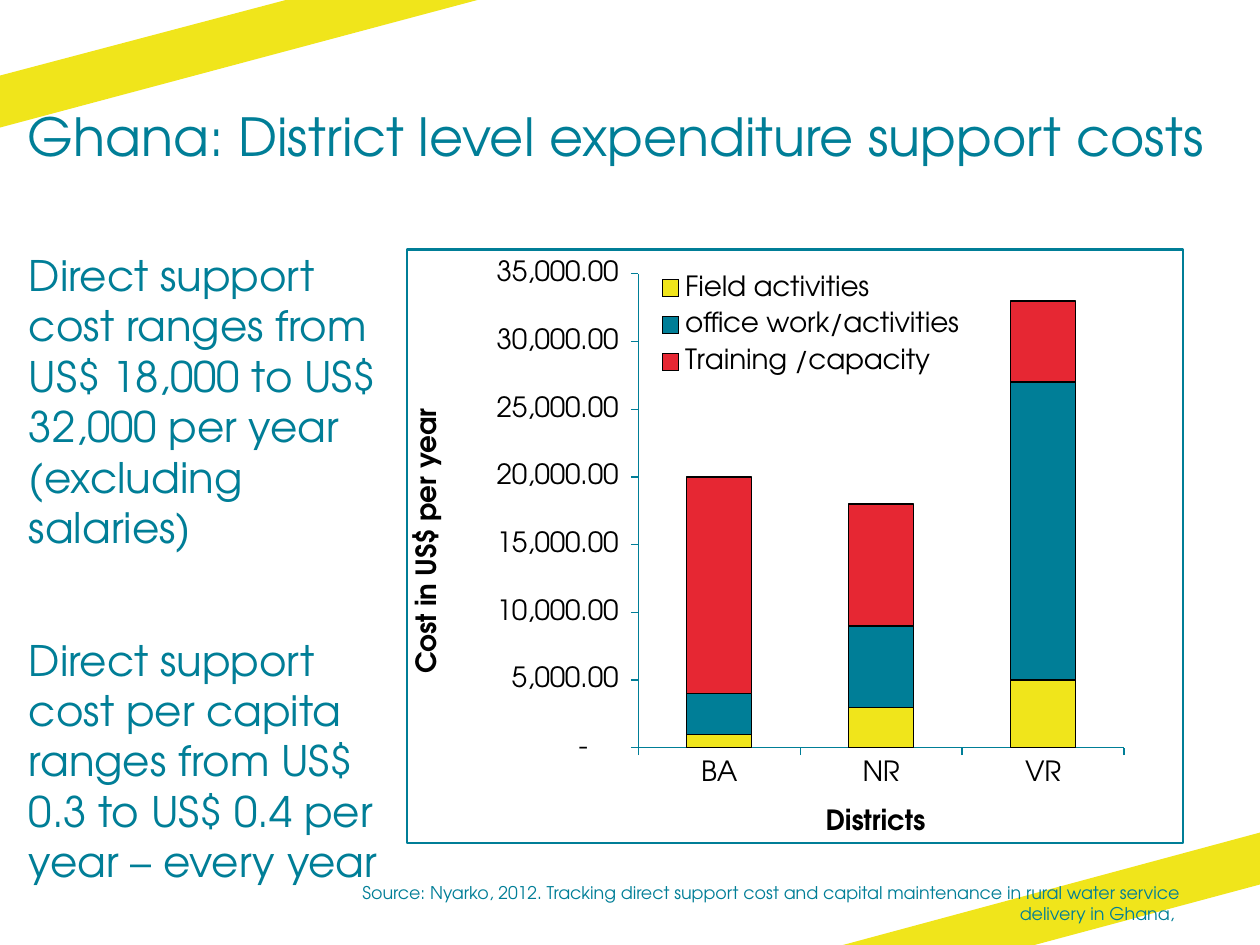
from lxml import etree
from pptx import Presentation
from pptx.chart.data import CategoryChartData
from pptx.dml.color import RGBColor
from pptx.enum.chart import XL_CHART_TYPE, XL_LEGEND_POSITION, XL_TICK_MARK
from pptx.enum.text import MSO_ANCHOR, MSO_AUTO_SIZE, PP_ALIGN
from pptx.oxml import parse_xml
from pptx.oxml.ns import nsdecls, qn
from pptx.util import Inches, Pt

STACKED = XL_CHART_TYPE.COLUMN_STACKED
LEGEND_BOTTOM = XL_LEGEND_POSITION.BOTTOM
TICK_OUT, TICK_NONE = XL_TICK_MARK.OUTSIDE, XL_TICK_MARK.NONE
TOP, NO_FIT = MSO_ANCHOR.TOP, MSO_AUTO_SIZE.NONE
LEFT, RIGHT = PP_ALIGN.LEFT, PP_ALIGN.RIGHT

THEME = {
    "font": "TeX Gyre Adventor",
    "teal": RGBColor.from_string("007E97"),
    "yellow": RGBColor.from_string("F0E51B"),
    "red": RGBColor.from_string("E62733"),
    "black": RGBColor.from_string("000000"),
    "title": Pt(30), "body": Pt(24), "chart": Pt(16), "source": Pt(10),
}

prs = Presentation()
prs.slide_width, prs.slide_height = Inches(10), Inches(7.5)
W, H = prs.slide_width, prs.slide_height
slide = prs.slides.add_slide(prs.slide_layouts[3])
title, findings, source = slide.placeholders


def fill_placeholder(holder, box, texts, size, align=LEFT, gap=0, spacing=1.0):
    """Place a placeholder and give it plain, unbulleted paragraphs."""
    holder.left, holder.top, holder.width, holder.height = (Inches(v) for v in box)
    frame = holder.text_frame
    frame.margin_left = frame.margin_right = frame.margin_top = frame.margin_bottom = 0
    frame.vertical_anchor, frame.word_wrap, frame.auto_size = TOP, True, NO_FIT
    for i, text in enumerate(texts):
        line = frame.paragraphs[0] if i == 0 else frame.add_paragraph()
        line.text = text
        props = line._p.get_or_add_pPr()
        props.set("marL", "0")
        props.set("indent", "0")
        etree.SubElement(props, qn("a:buNone"))
        line.alignment, line.line_spacing = align, spacing
        line.space_before, line.space_after = Pt(0), Pt(gap)
        line.font.name, line.font.size = THEME["font"], size
        line.font.color.rgb = THEME["teal"]


def set_layout(part, target=None, **shares):
    """Fix a chart part's place as shares of the chart's size."""
    for old in part.findall(qn("c:layout")):
        part.remove(old)
    layout = parse_xml(f"<c:layout {nsdecls('c')}><c:manualLayout/></c:layout>")
    if target:
        etree.SubElement(layout[0], qn("c:layoutTarget")).set("val", target)
    for key in ("x", "y"):
        etree.SubElement(layout[0], qn(f"c:{key}Mode")).set("val", "edge")
    for key, share in shares.items():
        etree.SubElement(layout[0], qn(f"c:{key}")).set("val", str(share))
    overlay = part.find(qn("c:overlay"))
    if overlay is None:
        part.insert(0, layout)
    else:
        overlay.addprevious(layout)


# Diagonal corner bands, behind the text
bands = [
    [(0.227, 0), (0, 0.08), (0, 0.135), (0.379, 0)],
    [(0.669, 1), (0.821, 1), (1, 0.936), (1, 0.881)],
]
for corners in bands:
    points = [(x * W, y * H) for x, y in corners]
    outline = slide.shapes.build_freeform(*points[0])
    outline.add_line_segments(points[1:], close=True)
    band = outline.convert_to_shape()
    band.shadow.inherit = False
    band.fill.solid()
    band.fill.fore_color.rgb = THEME["yellow"]
    band.line.fill.background()
    slide.shapes._spTree.insert(2, band._element)

# Title, findings and source
fill_placeholder(title, (0.22, 0.88, 9.56, 0.64),
                 ["Ghana: District level expenditure support costs"],
                 THEME["title"], spacing=0.9)
fill_placeholder(findings, (0.23, 1.98, 2.84, 4.67), [
    "Direct support cost ranges from US$ 18,000 to US$ 32,000 per year (excluding salaries)",
    "Direct support cost per capita ranges from US$ 0.3 to US$ 0.4 per year – every year",
], THEME["body"], gap=47)
fill_placeholder(source, (2.51, 7, 6.85, 0.12), [
    "Source: Nyarko, 2012. Tracking direct support cost and capital maintenance "
    "in rural water service delivery in Ghana, ",
], THEME["source"], align=RIGHT, gap=9)

# Cost chart
activities = [
    ("Field activities", (1000, 3000, 5000), "yellow"),
    ("office work/activities", (3000, 6000, 22000), "teal"),
    ("Training /capacity", (16000, 9000, 6000), "red"),
]
costs = CategoryChartData()
costs.categories = ["BA", "NR", "VR"]
for name, values, _ in activities:
    costs.add_series(name, values)
chart = slide.shapes.add_chart(STACKED, Inches(3.22), Inches(1.97),
                               Inches(6.18), Inches(4.73), costs).chart
chart.has_title = False
chart.font.name, chart.font.size = THEME["font"], THEME["chart"]
chart.font.color.rgb = THEME["black"]

plot = chart.plots[0]
plot.gap_width, plot.overlap, plot.vary_by_categories = 150, 100, False
for series, (_, _, color) in zip(plot.series, activities):
    series.format.fill.solid()
    series.format.fill.fore_color.rgb = THEME[color]
    series.format.line.color.rgb = THEME["black"]
    series.format.line.width = Pt(0.75)
set_layout(chart._chartSpace.chart.plotArea, "inner", x=0.298, y=0.041, w=0.626, h=0.799)

# Axes
districts, cost = chart.category_axis, chart.value_axis
for axis, label, x, y in ((districts, "Districts", 0.533, 0.93),
                          (cost, "Cost in US$ per year", 0, 0.26)):
    axis.has_major_gridlines = False
    axis.major_tick_mark, axis.minor_tick_mark = TICK_OUT, TICK_NONE
    axis.format.line.color.rgb = THEME["teal"]
    axis.format.line.width = Pt(0.75)
    caption = axis.axis_title.text_frame.paragraphs[0]
    caption.text = label
    caption.font.name, caption.font.size = THEME["font"], THEME["chart"]
    caption.font.bold, caption.font.color.rgb = True, THEME["black"]
    set_layout(axis.axis_title._element, x=x, y=y)
cost.axis_title.text_frame._txBody.bodyPr.set("rot", "-5400000")
cost.minimum_scale, cost.maximum_scale, cost.major_unit = 0, 35000, 5000
cost.tick_labels.number_format = r'_(* #,##0.00_);_(* \(#,##0.00\);_(* "-"??_);_(@_)'
cost.tick_labels.number_format_is_linked = False

# Legend inside the plot
chart.has_legend = True
chart.legend.position = LEGEND_BOTTOM
chart.legend.include_in_layout = False
set_layout(chart.legend._element, x=0.32, y=0.025, w=0.4, h=0.205)

# Chart frame
frame_line = parse_xml(
    f'<c:spPr {nsdecls("c", "a")}><a:noFill/><a:ln w="{Pt(1.5)}"><a:solidFill>'
    f'<a:srgbClr val="{THEME["teal"]}"/></a:solidFill></a:ln></c:spPr>')
chart._chartSpace.find(qn("c:txPr")).addprevious(frame_line)

prs.save("out.pptx")
